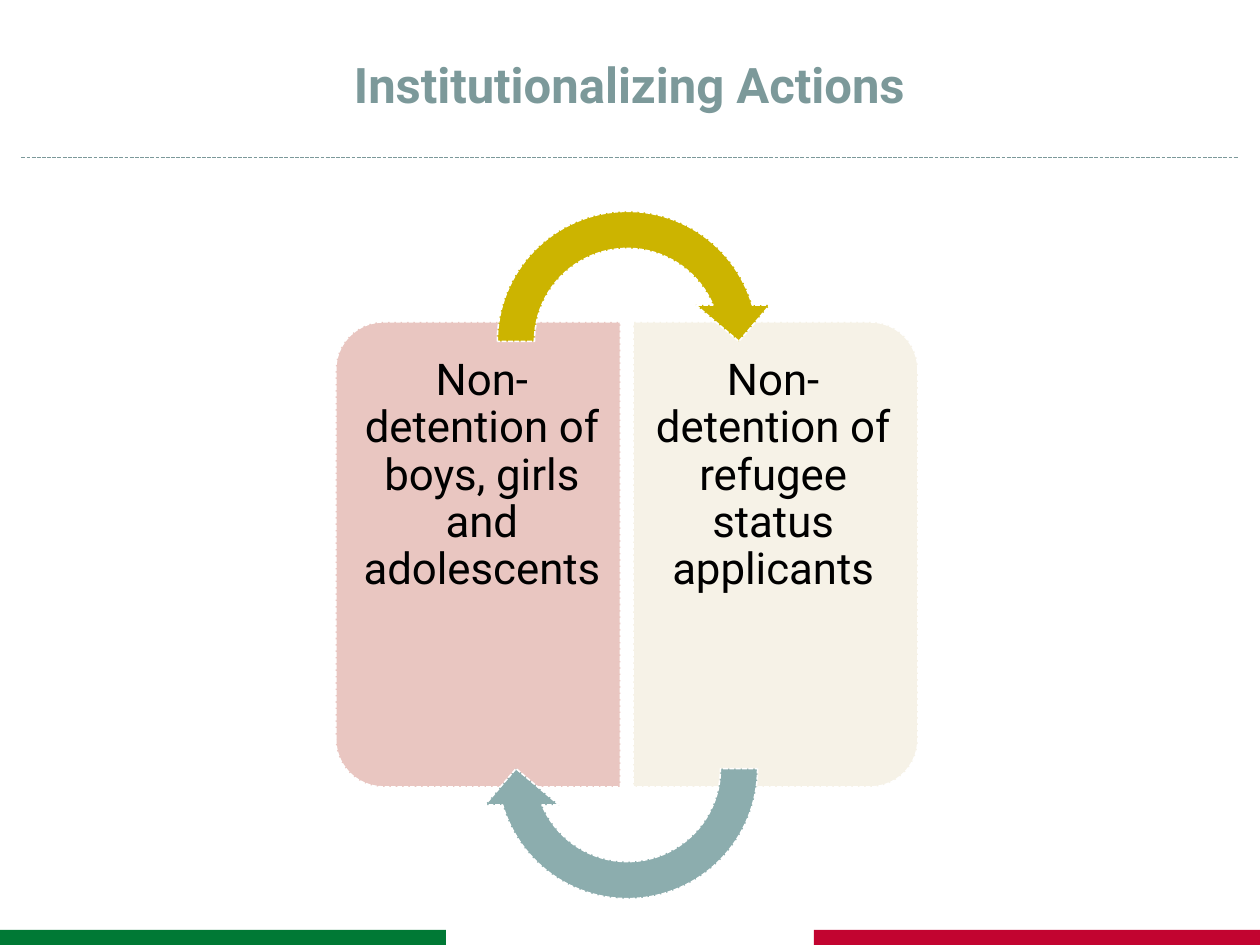
from dataclasses import dataclass

from lxml import etree
from pptx import Presentation
from pptx import util as u
from pptx.dml.color import RGBColor
from pptx.enum import dml, shapes, text
from pptx.oxml import ns


@dataclass(frozen=True)
class Theme:
    font: str = "Roboto"
    title_size: int = 28
    panel_size: int = 25
    outline_width: float = 0.9
    rule_width: float = 0.75
    slate: str = "7C999A"
    black: str = "000000"
    white: str = "FFFFFF"
    green: str = "007935"
    red: str = "C20430"
    pink: str = "E9C6C1"
    cream: str = "F6F2E7"
    gold: str = "CCB400"
    teal: str = "8CADAE"


THEME = Theme()
SLIDE_WIDTH, SLIDE_HEIGHT = 10, 7.5


def place(shape, left, top, width, height):
    shape.left, shape.top = u.Inches(left), u.Inches(top)
    shape.width, shape.height = u.Inches(width), u.Inches(height)


def style_line(line, color, width):
    line.color.rgb = RGBColor.from_string(color)
    line.width = u.Pt(width)
    line.dash_style = dml.MSO_LINE.SQUARE_DOT


def add_filled_shape(slide, kind, box, fill, rotation=0, adjustments=(), outlined=True):
    shape = slide.shapes.add_shape(kind, *map(u.Inches, box))
    shape.shadow.inherit = False
    shape.rotation = rotation
    for index, value in enumerate(adjustments):
        shape.adjustments[index] = value
    shape.fill.solid()
    shape.fill.fore_color.rgb = RGBColor.from_string(fill)
    if outlined:
        style_line(shape.line, THEME.white, THEME.outline_width)
    else:
        shape.line.fill.background()


def add_centred_run(paragraph, wording, size, color, bold=False):
    paragraph.alignment = text.PP_ALIGN.CENTER
    run = paragraph.add_run()
    run.text = wording
    run.font.name = THEME.font
    run.font.size = u.Pt(size)
    run.font.bold = bold
    run.font.color.rgb = RGBColor.from_string(color)


def add_title(slide, wording):
    title = slide.shapes.title
    place(title, 0.33, 0.25, 9.33, 0.83)
    title.text_frame.vertical_anchor = text.MSO_ANCHOR.MIDDLE
    add_centred_run(title.text_frame.paragraphs[0], wording,
                    THEME.title_size, THEME.slate, bold=True)


def add_rule(slide, left, right, top):
    rule = slide.shapes.add_connector(
        shapes.MSO_CONNECTOR.STRAIGHT, *map(u.Inches, (left, top, right, top)))
    style_line(rule.line, THEME.slate, THEME.rule_width)
    etree.SubElement(rule._element.spPr, ns.qn("a:effectLst"))


def add_footer_band(slide, left, color):
    height = 0.12
    add_filled_shape(slide, shapes.MSO_SHAPE.RECTANGLE,
                     (left, SLIDE_HEIGHT - height, 3.54, height), color, outlined=False)


def add_panel(slide, left, fill, rotation):
    # The shape lies on its side, so its length becomes the panel height
    add_filled_shape(slide, shapes.MSO_SHAPE.ROUND_2_SAME_RECTANGLE,
                     (left, 3.27, 3.69, 2.26), fill, rotation, (0.167, 0))


def add_panel_text(slide, left, wording, margin_left, margin_right):
    box = slide.shapes.add_textbox(*map(u.Inches, (left, 2.67, 2.15, 3.47)))
    frame = box.text_frame
    frame.word_wrap = True
    frame.margin_left, frame.margin_right = u.Inches(margin_left), u.Inches(margin_right)
    frame.margin_top = frame.margin_bottom = u.Inches(0.17)
    paragraph = frame.paragraphs[0]
    paragraph.line_spacing = 0.9
    add_centred_run(paragraph, wording, THEME.panel_size, THEME.black)


def add_cycle_arrow(slide, top, fill, rotation):
    add_filled_shape(slide, shapes.MSO_SHAPE.CIRCULAR_ARROW, (3.8, top, 2.36, 2.36),
                     fill, rotation, (0.125, 11.42, 204.58, 108, 0.125))


def main():
    presentation = Presentation()
    presentation.slide_width = u.Inches(SLIDE_WIDTH)
    presentation.slide_height = u.Inches(SLIDE_HEIGHT)
    slide = presentation.slides.add_slide(presentation.slide_layouts.get_by_name("Title Only"))

    # Heading and flag bands
    add_title(slide, "Institutionalizing Actions")
    add_rule(slide, 0.17, 9.83, 1.25)
    add_footer_band(slide, 0, THEME.green)
    add_footer_band(slide, 6.46, THEME.red)

    # Facing panels
    add_panel(slide, 1.95, THEME.pink, 270)
    add_panel_text(slide, 2.78, "Non-detention of boys, girls and adolescents", 0.1, 0.16)
    add_panel(slide, 4.31, THEME.cream, 90)
    add_panel_text(slide, 5.03, "Non-detention of refugee status applicants", 0.16, 0.1)

    # Cycle arrows
    add_cycle_arrow(slide, 1.53, THEME.gold, 0)
    add_cycle_arrow(slide, 4.92, THEME.teal, 180)

    presentation.save("out.pptx")


if __name__ == "__main__":
    main()
